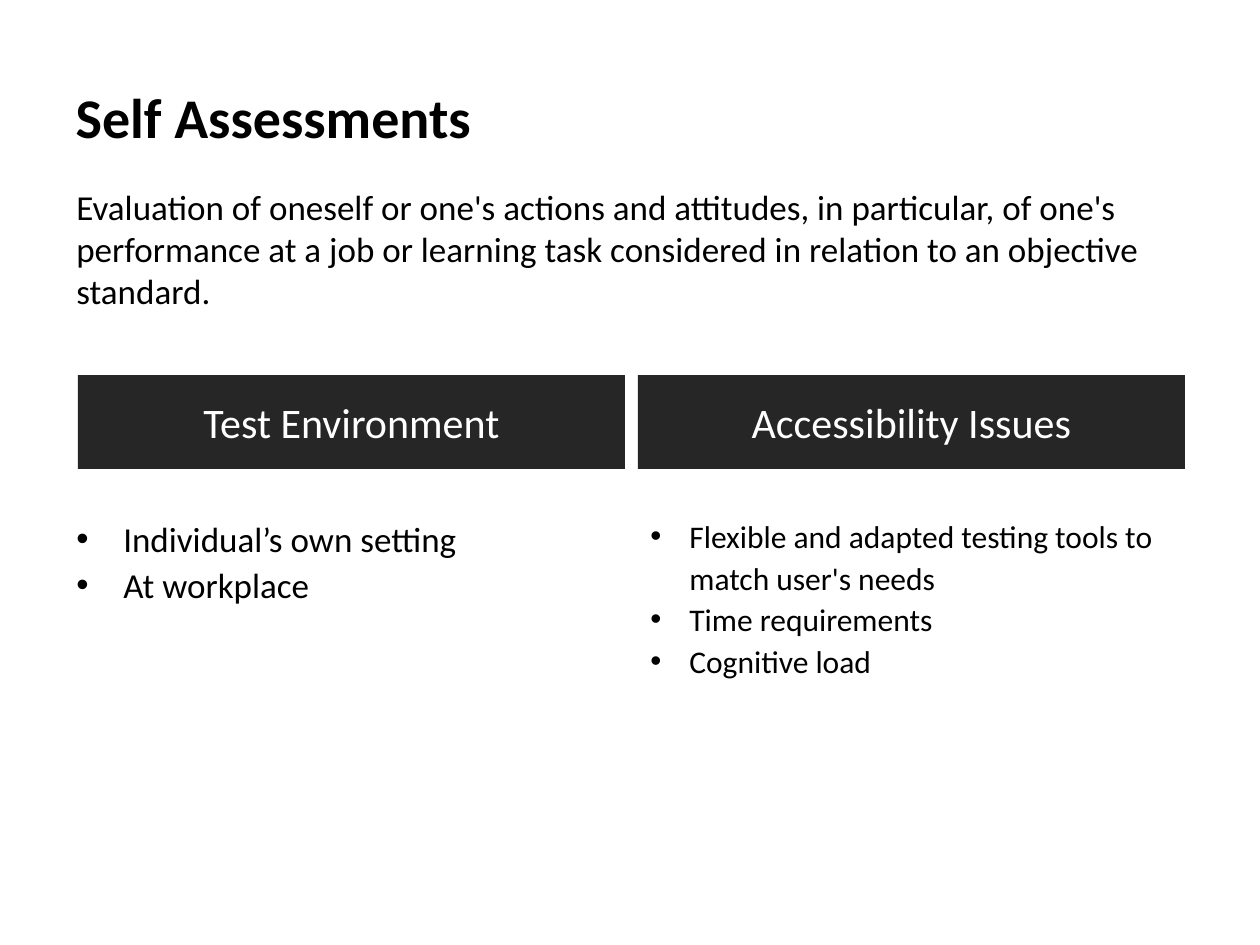
from lxml import etree
from pptx import Presentation
from pptx.dml.color import RGBColor
from pptx.enum.shapes import MSO_SHAPE
from pptx.enum.text import MSO_ANCHOR, MSO_AUTO_SIZE, PP_ALIGN
from pptx.oxml.ns import qn
from pptx.util import Emu, Pt

RECT = MSO_SHAPE.RECTANGLE
MIDDLE = MSO_ANCHOR.MIDDLE
LEFT, CENTER = PP_ALIGN.LEFT, PP_ALIGN.CENTER
GROW, FIXED = MSO_AUTO_SIZE.SHAPE_TO_FIT_TEXT, MSO_AUTO_SIZE.NONE

BLACK, WHITE, DARK = "000000", "FFFFFF", "262626"


def px(n):
    return Emu(round(n * 914400 / 126))


def color(code):
    return RGBColor.from_string(code)


def assign(item, values):
    for name, value in values.items():
        setattr(item, name, value)


class Page:
    """Holds the text style and the slide being filled."""

    font = "Calibri"

    def __init__(self, deck):
        self.slide = deck.slides.add_slide(deck.slide_layouts[5])

    def label(self, shape, lines, size, ink=BLACK, bold=False, frame=None, para=None):
        """Fill a shape with one paragraph per line and return the paragraphs."""
        text = shape.text_frame
        text.text = "\n".join(lines)
        assign(text, {"word_wrap": True, **(frame or {})})
        for item in text.paragraphs:
            assign(item, para or {})
            assign(item.runs[0].font, {"name": self.font, "size": Pt(size), "bold": bold})
            item.runs[0].font.color.rgb = color(ink)
        return text.paragraphs

    def title(self, text, box):
        shape = self.slide.shapes.title
        assign(shape, dict(zip(("left", "top", "width", "height"), map(px, box))))
        self.label(shape, [text], 32, bold=True,
                   frame={"vertical_anchor": MIDDLE, "auto_size": FIXED},
                   para={"alignment": LEFT})

    def bar(self, text, box):
        shape = self.slide.shapes.add_shape(RECT, *map(px, box))
        shape.shadow.inherit = False
        shape.fill.solid()
        shape.fill.fore_color.rgb = color(DARK)
        shape.line.fill.background()
        self.label(shape, [text], 24, WHITE, frame={"vertical_anchor": MIDDLE},
                   para={"alignment": CENTER})

    def body(self, lines, box, size, margin, hang=0, level=0):
        """Add a text box; a hanging indent turns its lines into bullets."""
        shape = self.slide.shapes.add_textbox(*map(px, box))
        para = {"level": level}
        if hang:
            para["line_spacing"] = 1.1
        for item in self.label(shape, lines, size, frame={"auto_size": GROW}, para=para):
            props = item._p.get_or_add_pPr()
            props.set("marL", str(px(margin)))
            props.set("indent", str(px(-hang)))
            if hang:
                etree.SubElement(props, qn("a:buFont")).set("typeface", "Arial")
                etree.SubElement(props, qn("a:buChar")).set("char", "•")


def main():
    deck = Presentation()
    assign(deck, {"slide_width": px(1260), "slide_height": px(945)})
    page = Page(deck)

    for col, head in enumerate(("Test Environment", "Accessibility Issues")):
        page.bar(head, (78 + 560 * col, 375, 547, 94))

    page.title("Self Assessments", (63, 38, 1134, 157))
    page.body(["Evaluation of oneself or one's actions and attitudes, in particular, "
               "of one's performance at a job or learning task considered in relation "
               "to an objective standard."],
              (1, 179, 1246, 140), 20, margin=63, level=1)
    page.body(["Individual’s own setting", "At workplace"],
              (1, 507, 630, 106), 20, margin=110, hang=47, level=1)
    page.body(["Flexible and adapted testing tools to match user's needs",
               "Time requirements", "Cognitive load"],
              (638, 507, 572, 180), 18, margin=39, hang=39)

    deck.save("out.pptx")


if __name__ == "__main__":
    main()
